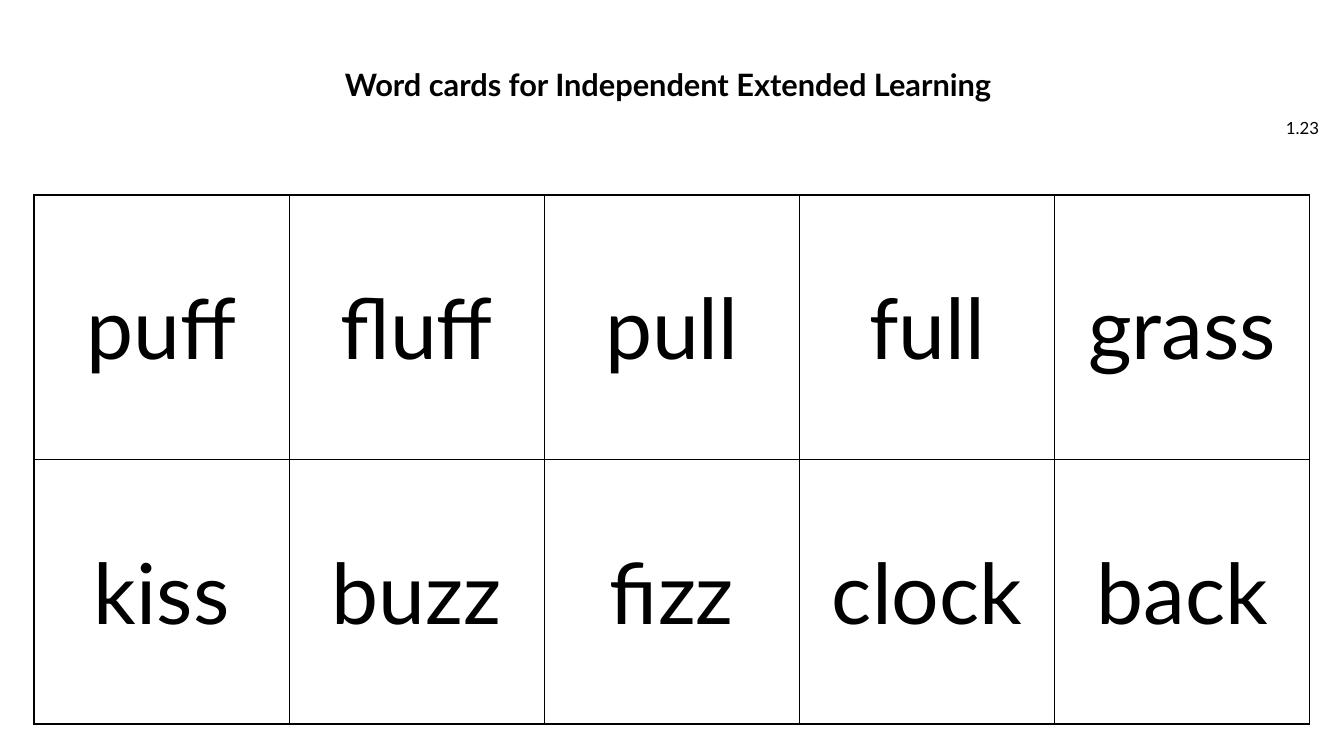
from dataclasses import dataclass

from lxml.etree import SubElement
from pptx import Presentation
from pptx.dml.color import RGBColor
from pptx.enum.text import MSO_ANCHOR, PP_ALIGN
from pptx.oxml.ns import qn
from pptx.util import Emu, Pt

WORDS = [
    ["puff", "fluff", "pull", "full", "grass"],
    ["kiss", "buzz", "fizz", "clock", "back"],
]


@dataclass(frozen=True)
class Theme:
    font: str = "Lato"
    ink: str = "000000"
    paper: str = "FFFFFF"
    title: int = 22
    label: int = 12
    word: int = 60
    rule: int = 1


def px(n):
    return Emu(round(n * 914400 / 100.8))


class CardSlide:
    def __init__(self, prs, theme):
        self.theme = theme
        self.s = prs.slides.add_slide(prs.slide_layouts[6])

    def set_text(self, tf, text, size, align, bold=False):
        tf.text = text
        p = tf.paragraphs[0]
        p.alignment = align
        font = p.runs[0].font
        font.name = self.theme.font
        font.size = Pt(size)
        font.bold = bold
        font.color.rgb = RGBColor.from_string(self.theme.ink)
        return p

    def text(self, box, text, size, align, anchor=MSO_ANCHOR.TOP, bold=False):
        tf = self.s.shapes.add_textbox(*map(px, box)).text_frame
        tf.word_wrap = True
        tf.vertical_anchor = anchor
        return self.set_text(tf, text, size, align, bold)

    def border(self, cell):
        tcPr = cell._tc.get_or_add_tcPr()
        for i, side in enumerate(("a:lnL", "a:lnR", "a:lnT", "a:lnB")):
            ln = tcPr.makeelement(qn(side), {"w": str(Pt(self.theme.rule))})
            fill = SubElement(ln, qn("a:solidFill"))
            SubElement(fill, qn("a:srgbClr"), val=self.theme.ink)
            tcPr.insert(i, ln)

    def table(self, box, rows):
        table = self.s.shapes.add_table(len(rows), len(rows[0]), *map(px, box)).table
        table.first_row = False
        table.horz_banding = False
        for r, row in enumerate(rows):
            for c, word in enumerate(row):
                cell = table.cell(r, c)
                cell.fill.solid()
                cell.fill.fore_color.rgb = RGBColor.from_string(self.theme.paper)
                cell.vertical_anchor = MSO_ANCHOR.MIDDLE
                self.set_text(cell.text_frame, word, self.theme.word, PP_ALIGN.CENTER)
                self.border(cell)


def main():
    prs = Presentation()
    prs.slide_width, prs.slide_height = px(1344), px(756)
    theme = Theme()
    cards = CardSlide(prs, theme)
    cards.text((1265, 108, 64, 40), "1.23", theme.label, PP_ALIGN.RIGHT, MSO_ANCHOR.MIDDLE)
    p = cards.text((233, 65, 878, 35), "Word cards for Independent Extended Learning ",
                   theme.title, PP_ALIGN.CENTER, bold=True)
    p.line_spacing = 0.9
    cards.table((34, 195, 1276, 529), WORDS)
    prs.save("out.pptx")


if __name__ == "__main__":
    main()
